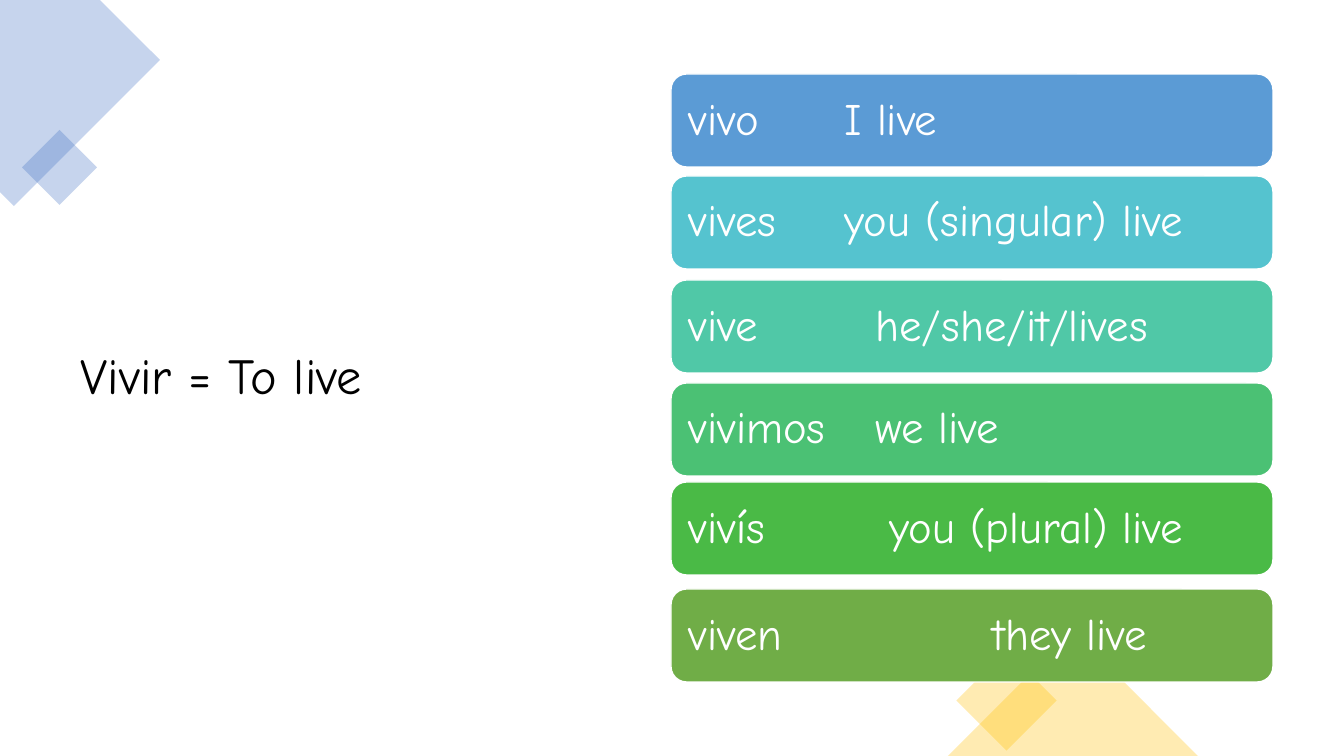
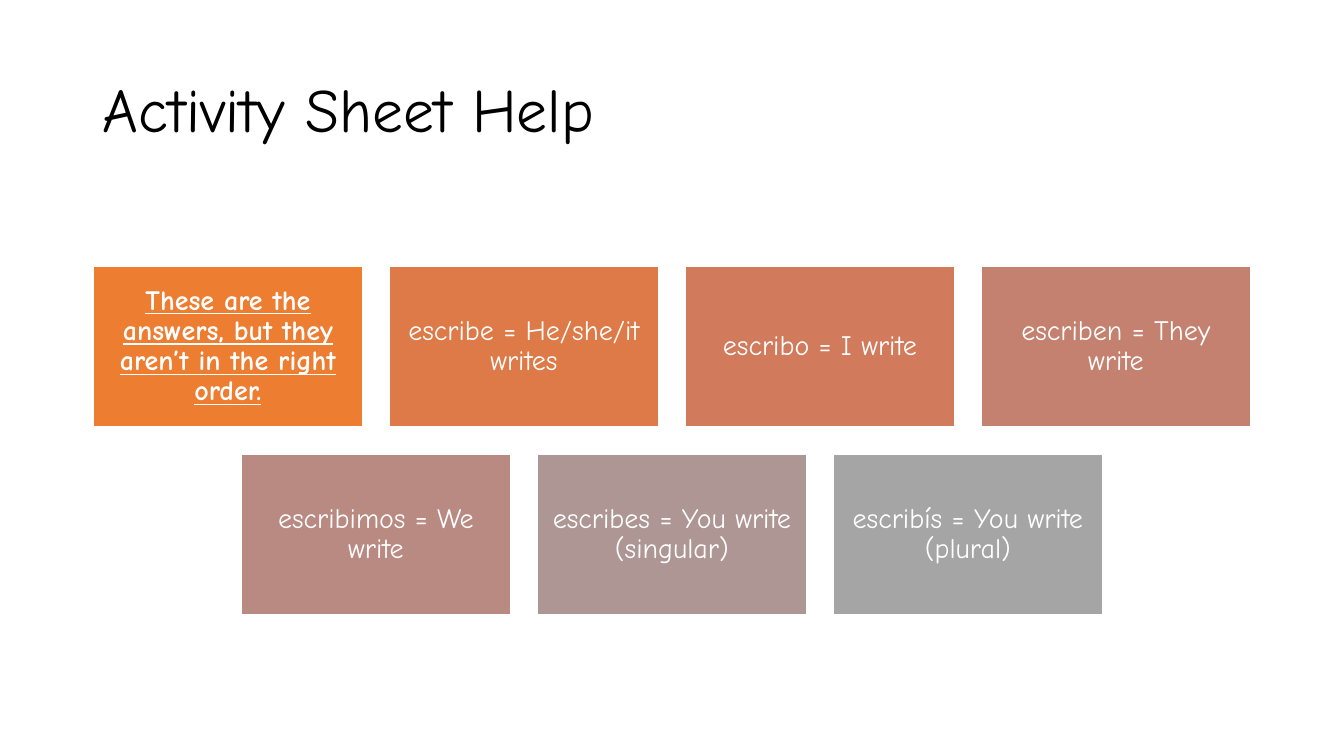
from lxml.etree import SubElement
from pptx import Presentation
from pptx.dml.color import RGBColor
from pptx.enum.shapes import MSO_SHAPE as Shape
from pptx.enum.text import MSO_ANCHOR as Anchor, MSO_AUTO_SIZE as AutoSize, PP_ALIGN as Align
from pptx.oxml.ns import qn
from pptx.util import Pt

SCALE = 914400 / 100.8
SLIDE_WIDTH, SLIDE_HEIGHT = 1344, 756
FONT = "Comic Neue"
BLACK, WHITE, BLUE, GOLD = "000000", "FFFFFF", "4472C4", "FFC000"

VERB_ROWS = [  # top, fill, Spanish, English, tab position
    (74, "5B9BD5", "vivo", "I live", 156),
    (176, "55C3CF", "vives", "you (singular) live", 156),
    (280, "50C8A7", "vive", "he/she/it/lives", 187),
    (383, "4BC174", "vivimos", "we live", 187),
    (482, "4ABA46", "vivís", "you (plural) live", 201),
    (589, "70AD47", "viven", "they live", 304),
]
ANSWER_ROWS = [
    [("ED7D31", "These are the answers, but they aren’t in the right order."),
     ("DE7A47", "escribe = He/she/it writes"),
     ("D17B5C", "escribo = I write"),
     ("C48170", "escriben = They write")],
    [("B98A82", "escribimos = We write"),
     ("AE9694", "escribes = You write (singular)"),
     ("A5A5A5", "escribís = You write (plural)")],
]


def px(length):
    return round(length * SCALE)


def color(value):
    return RGBColor.from_string(value)


class SlideBuilder:
    def __init__(self):
        self.deck = Presentation()
        self.deck.slide_width, self.deck.slide_height = px(SLIDE_WIDTH), px(SLIDE_HEIGHT)
        self.slide = None

    def add_slide(self, title, left, top, width, height, size):
        self.slide = self.deck.slides.add_slide(self.deck.slide_layouts[5])
        box = self.slide.shapes.title
        box.left, box.top, box.width, box.height = map(px, (left, top, width, height))
        self.set_text(box, title, size, BLACK, Align.LEFT, 10)

    def set_text(self, box, text, size, text_color, align, inset):
        """Fill a shape with one vertically centred paragraph and return it."""
        frame = box.text_frame
        frame.text = text
        frame.word_wrap = True
        frame.auto_size = AutoSize.NONE
        frame.vertical_anchor = Anchor.MIDDLE
        frame.margin_left = frame.margin_right = px(inset)
        frame.margin_top = frame.margin_bottom = px(inset)
        para = frame.paragraphs[0]
        para.alignment = align
        para.line_spacing = 0.9
        font = para.runs[0].font
        font.name, font.size = FONT, Pt(size)
        font.color.rgb = color(text_color)
        return para

    def paint(self, shape, fill):
        shape.shadow.inherit = False
        shape.fill.solid()
        shape.fill.fore_color.rgb = color(fill)

    def box(self, kind, left, top, width, height, fill):
        shape = self.slide.shapes.add_shape(kind, px(left), px(top), px(width), px(height))
        self.paint(shape, fill)
        shape.line.color.rgb = color(WHITE)
        shape.line.width = Pt(1)
        return shape

    def make_decoration(self, shape, fill):
        """Give a shape a 30 % opaque fill and no outline."""
        self.paint(shape, fill)
        shape.line.fill.background()
        fill_color = shape._element.spPr.find(f"{qn('a:solidFill')}/{qn('a:srgbClr')}")
        SubElement(fill_color, qn("a:alpha"), val="30000")

    def decoration(self, kind, left, top, width, height, fill, rotation=0):
        shape = self.slide.shapes.add_shape(kind, px(left), px(top), px(width), px(height))
        shape.rotation = rotation
        self.make_decoration(shape, fill)

    def polygon(self, points, fill):
        outline = self.slide.shapes.build_freeform(*points[0], scale=SCALE)
        outline.add_line_segments(points[1:], close=True)
        self.make_decoration(outline.convert_to_shape(), fill)

    def verb_row(self, top, fill, spanish, english, tab):
        bar = self.box(Shape.ROUNDED_RECTANGLE, 671, top, 602, 93, fill)
        para = self.set_text(bar, f"{spanish}\t{english}", 32, WHITE, Align.LEFT, 13)
        stops = SubElement(para._p.get_or_add_pPr(), qn("a:tabLst"))
        SubElement(stops, qn("a:tab"), pos=str(px(tab)), algn="l")

    def card_row(self, cards, top, width, height, gap):
        """Centre a row of equal cards on the slide and return their paragraphs."""
        left = (SLIDE_WIDTH - len(cards) * (width + gap) + gap) / 2
        paras = []
        for column, (fill, text) in enumerate(cards):
            card = self.box(Shape.RECTANGLE, left + column * (width + gap), top,
                            width, height, fill)
            paras.append(self.set_text(card, text, 20, WHITE, Align.CENTER, 8))
        return paras


def build_verb_slide(builder):
    builder.add_slide("Vivir = To live", 71, 71, 529, 614, 36)
    builder.polygon([(0, 0), (100, 0), (160, 60), (14, 206), (0, 192)], BLUE)
    builder.decoration(Shape.RECTANGLE, 33, 141, 53, 53, BLUE, 45)
    builder.decoration(Shape.RECTANGLE, 971, 665, 71, 71, GOLD, 45)
    builder.decoration(Shape.ISOSCELES_TRIANGLE, 948, 631, 250, 125, GOLD)
    for row in VERB_ROWS:
        builder.verb_row(*row)


def build_answer_slide(builder):
    builder.add_slide("Activity Sheet Help", 93, 40, 1159, 146, 44)
    width, height, gap = 269, 161, 27
    paras = []
    for index, cards in enumerate(ANSWER_ROWS):
        paras += builder.card_row(cards, 266 + index * (height + gap), width, height, gap)
    instruction = paras[0].runs[0].font
    instruction.bold = instruction.underline = True


def main():
    builder = SlideBuilder()
    build_verb_slide(builder)
    build_answer_slide(builder)
    builder.deck.save("out.pptx")


if __name__ == "__main__":
    main()
